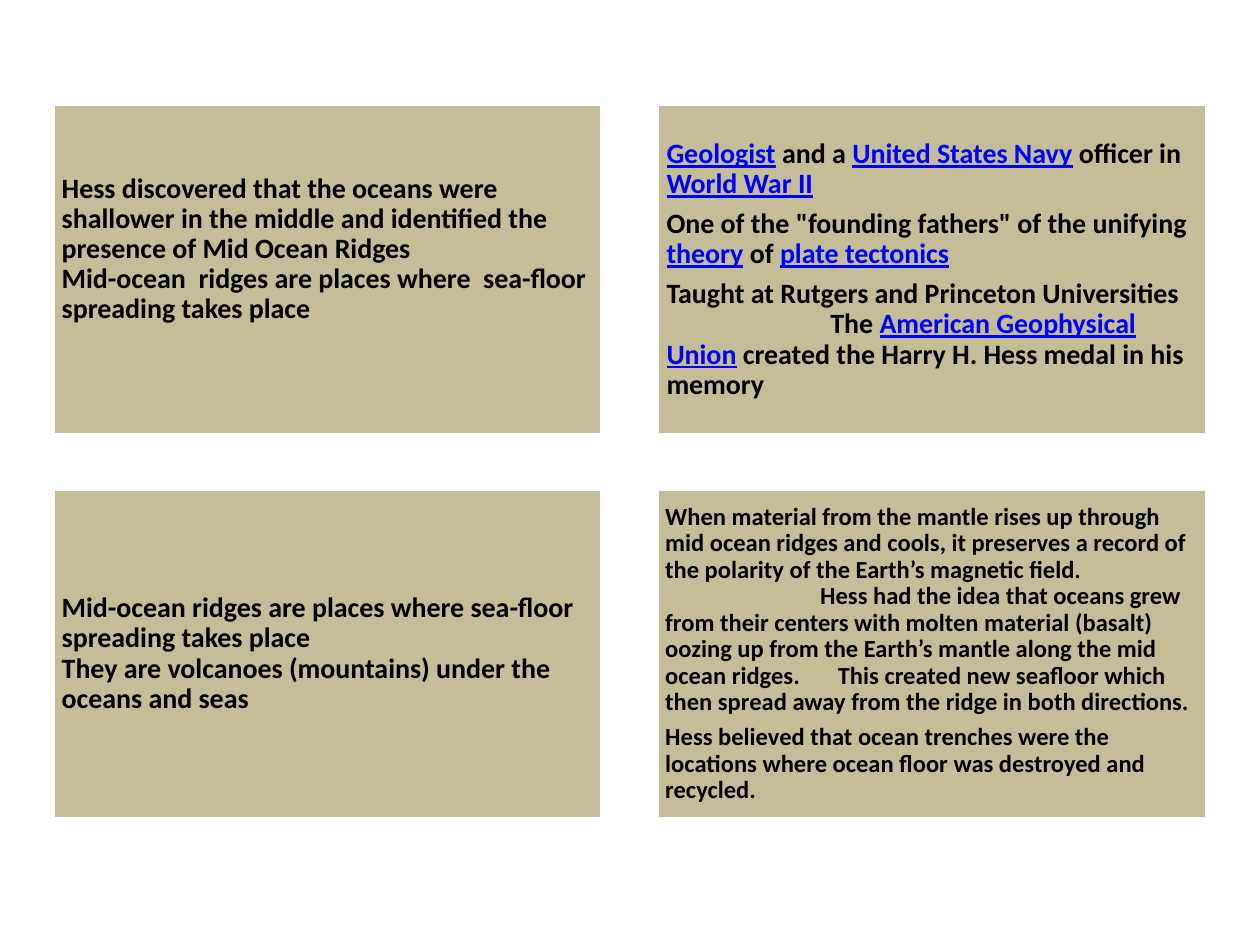
from copy import deepcopy
from dataclasses import dataclass

from lxml.etree import SubElement as SubEl
from pptx import Presentation
from pptx.dml.color import RGBColor
from pptx.enum.shapes import MSO_SHAPE as Shape
from pptx.enum.text import MSO_ANCHOR as Anchor, PP_ALIGN as Align
from pptx.oxml.ns import qn
from pptx.util import Inches, Pt

TAN = RGBColor(0xC4, 0xBD, 0x97)
WHITE = RGBColor(0xFF, 0xFF, 0xFF)
BLACK = RGBColor(0, 0, 0)
BLUE = RGBColor(0, 0, 0xFF)

LEFT, TOP = 0.42, 0.83
WIDTH, HEIGHT = 4.36, 2.62
STEP_X, STEP_Y = 4.8, 3.05


@dataclass
class Panel:
    texts: list[str]
    size: int = 16
    inset: float = 0.07
    lift: float = 0
    tabs: tuple[float, ...] = ()


PANELS = [
    Panel(
        [
            "Hess discovered that the oceans were shallower in the middle and "
            "identified the presence of Mid Ocean Ridges\n"
            "Mid-ocean  ridges are places where  sea-floor spreading takes place"
        ],
        lift=0.32,
    ),
    Panel(
        [
            "|Geologist| and a |United States Navy| officer in |World War II|",
            'One of the "founding fathers" of the unifying |theory| of |plate tectonics|',
            "Taught at Rutgers and Princeton Universities\n"
            "\tThe |American Geophysical Union| created the Harry H. Hess medal "
            "in his memory",
        ],
        tabs=(1.3,),
    ),
    Panel(
        [
            "Mid-ocean ridges are places where sea-floor spreading takes place\n"
            "They are volcanoes (mountains) under the oceans and seas"
        ]
    ),
    Panel(
        [
            "When material from the mantle rises up through mid ocean ridges and "
            "cools, it preserves a record of the polarity of the Earth’s magnetic field.\n"
            "\tHess had the idea that oceans grew from their centers with molten "
            "material (basalt) oozing up from the Earth’s mantle along the mid ocean "
            "ridges.\t\tThis created new seafloor which then spread away from the "
            "ridge in both directions.",
            "Hess believed that ocean trenches were the locations where ocean floor "
            "was destroyed and recycled.",
        ],
        size=14,
        inset=0.06,
        tabs=(1.23, 1.37),
    ),
]


def add_tabs(para, stops: tuple[float, ...]) -> None:
    tabs = SubEl(para._p.get_or_add_pPr(), qn("a:tabLst"))
    for stop in stops:
        SubEl(tabs, qn("a:tab"), pos=str(Inches(stop)), algn="l")


def add_run(para, text: str, size: int, term: bool):
    run = para.add_run()
    run.text = text
    font = run.font
    font.name = "Calibri"
    font.size = Pt(size)
    font.bold = True
    font.underline = term
    font.color.rgb = BLUE if term else BLACK
    return run


def fill_para(para, text: str, panel: Panel) -> None:
    if "\t" in text:
        add_tabs(para, panel.tabs)
    para.alignment = Align.LEFT
    para.line_spacing = 0.9
    para.space_before = Pt(0)
    para.space_after = Pt(0.35 * panel.size)
    run = None
    for row, line in enumerate(text.split("\n")):
        if row:
            para.add_line_break()
            para._p[-1].append(deepcopy(run._r.rPr))
        for part, words in enumerate(line.split("|")):
            if words:
                run = add_run(para, words, panel.size, part % 2 == 1)


def draw_panel(slide, panel: Panel, col: int, row: int) -> None:
    box = slide.shapes.add_shape(
        Shape.RECTANGLE,
        Inches(LEFT + col * STEP_X),
        Inches(TOP + row * STEP_Y),
        Inches(WIDTH),
        Inches(HEIGHT),
    )
    box.shadow.inherit = False
    box.fill.solid()
    box.fill.fore_color.rgb = TAN
    box.line.color.rgb = WHITE
    box.line.width = Pt(2)
    frame = box.text_frame
    frame.word_wrap = True
    frame.vertical_anchor = Anchor.MIDDLE
    frame.margin_left = frame.margin_right = frame.margin_top = Inches(panel.inset)
    frame.margin_bottom = Inches(panel.inset + panel.lift)
    for index, text in enumerate(panel.texts):
        para = frame.add_paragraph() if index else frame.paragraphs[0]
        fill_para(para, text, panel)


def main() -> None:
    deck = Presentation()
    deck.slide_width, deck.slide_height = Inches(10), Inches(7.5)
    slide = deck.slides.add_slide(deck.slide_layouts[6])
    for index, panel in enumerate(PANELS):
        row, col = divmod(index, 2)
        draw_panel(slide, panel, col, row)
    deck.save("out.pptx")


if __name__ == "__main__":
    main()
